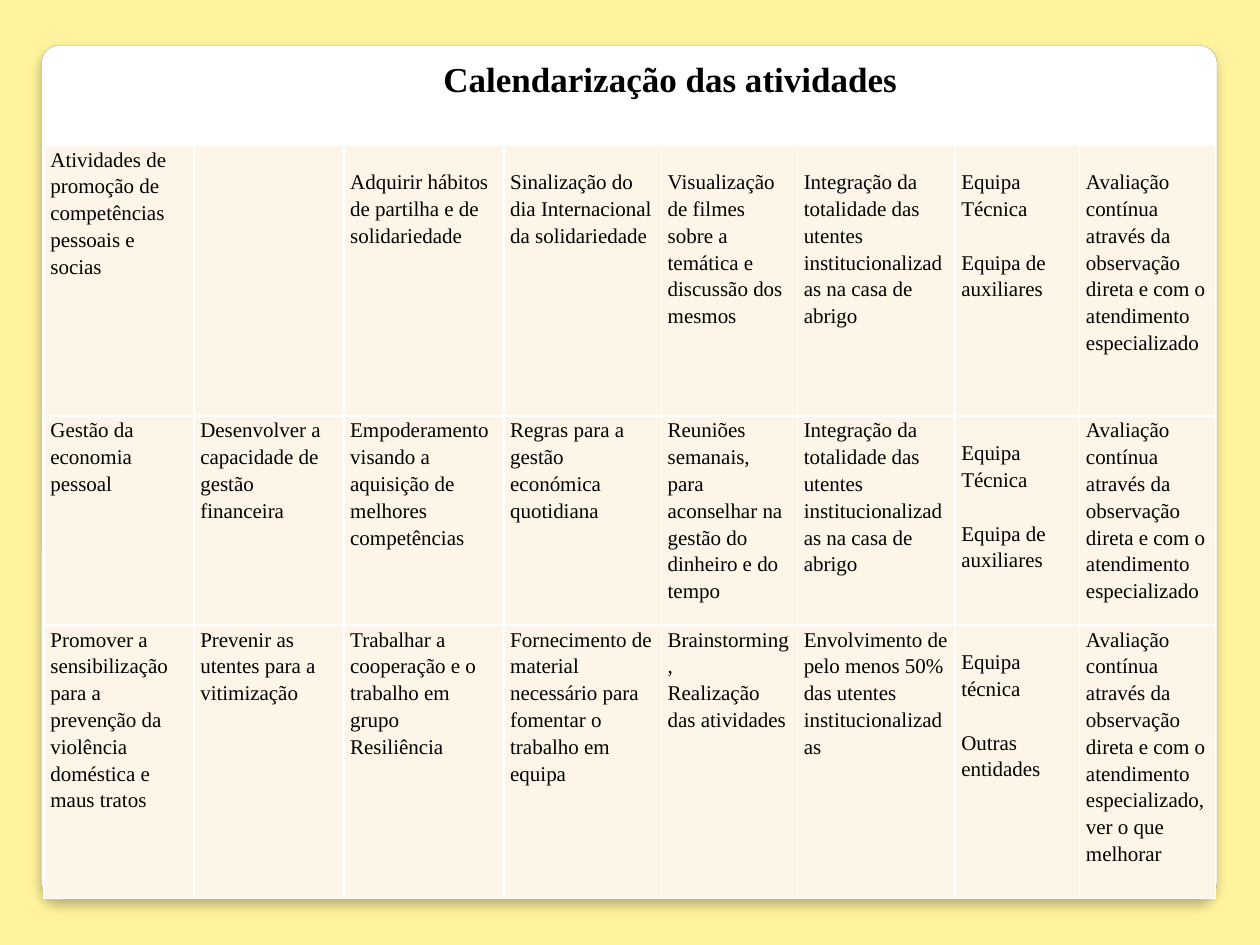
from lxml import etree
from pptx import Presentation
from pptx import util as u
from pptx.dml.color import RGBColor
from pptx.enum import shapes, text
from pptx.oxml import parse_xml
from pptx.oxml.ns import nsdecls, qn

COLORS = {
    "background": "FFF39D",
    "panel_line": "A4A4A4",
    "cell": "FDF6E8",
    "border": "FFFFFF",
    "text": "000000",
}
PANEL_STOPS = [(0, "FFFFFF"), (98, "FFFFFF"), (99, "F7F7F7"), (100, "DADADA")]
FONT = "Times New Roman"

COL_WIDTHS = [1.19, 1.19, 1.27, 1.25, 1.08, 1.25, 0.99, 1.08]
ROW_HEIGHTS = [2.15, 1.66, 2.17]
TEAM_COL = 6

INTEGRATION = "Integração da totalidade das utentes institucionalizadas na casa de abrigo"
EVALUATION = ("Avaliação contínua através da observação direta "
              "e com o atendimento especializado")
TEAM = ["Equipa Técnica", "Equipa de auxiliares"]

# Each cell is a list of paragraphs
ACTIVITIES = [
    [
        ["Atividades de promoção de competências pessoais e socias"],
        [],
        ["Adquirir hábitos de partilha e de solidariedade"],
        ["Sinalização do dia Internacional da solidariedade"],
        ["Visualização de filmes sobre a temática e discussão dos mesmos"],
        [INTEGRATION],
        TEAM,
        [EVALUATION],
    ],
    [
        ["Gestão da economia pessoal"],
        ["Desenvolver a capacidade de gestão financeira"],
        ["Empoderamento visando a aquisição de melhores competências"],
        ["Regras para a gestão económica quotidiana"],
        ["Reuniões semanais, para aconselhar na gestão do dinheiro e do tempo"],
        [INTEGRATION],
        TEAM,
        [EVALUATION],
    ],
    [
        ["Promover a sensibilização para a prevenção da violência doméstica e maus tratos"],
        ["Prevenir as utentes para a vitimização"],
        ["Trabalhar a cooperação e o trabalho em grupo", "Resiliência"],
        ["Fornecimento de material necessário para fomentar o trabalho em equipa"],
        ["Brainstorming,", "Realização das atividades"],
        ["Envolvimento de pelo menos 50% das utentes institucionalizadas"],
        ["Equipa técnica", "Outras entidades"],
        [EVALUATION + ", ver o que melhorar"],
    ],
]


def rgb(name):
    return RGBColor.from_string(COLORS[name])


def add_run(p, content, size, bold=False):
    r = p.add_run()
    r.text = content
    r.font.name = FONT
    r.font.size = u.Pt(size)
    r.font.bold = bold
    r.font.color.rgb = rgb("text")


def add_panel(s):
    sp = s.shapes.add_shape(shapes.MSO_SHAPE.ROUNDED_RECTANGLE, u.Inches(0.33),
                            u.Inches(0.36), u.Inches(9.33), u.Inches(6.78))
    sp.adjustments[0] = 0.021
    sp.line.color.rgb = rgb("panel_line")
    sp.line.width = u.Pt(0.16)

    # Vertical gradient that darkens only at the bottom edge
    sp.fill.gradient()
    sp.fill.gradient_angle = 270
    props = sp._element.spPr
    stops = props.find(".//" + qn("a:gsLst"))
    for old in list(stops):
        stops.remove(old)
    for position, color in PANEL_STOPS:
        stop = etree.SubElement(stops, qn("a:gs"), pos=str(position * 1000))
        etree.SubElement(stop, qn("a:srgbClr"), val=color)

    # Soft shadow below
    sp.shadow.inherit = False
    props.remove(props.find(qn("a:effectLst")))
    props.append(parse_xml(
        f'<a:effectLst {nsdecls("a")}><a:outerShdw blurRad="{u.Pt(6)}" '
        f'dist="{u.Pt(4)}" dir="5400000" algn="t" rotWithShape="0">'
        '<a:srgbClr val="000000"><a:alpha val="25000"/></a:srgbClr>'
        '</a:outerShdw></a:effectLst>'))

    # Behind the title
    s.shapes._spTree.insert(2, sp._element)


def set_title(s):
    sp = s.shapes.title
    sp.left, sp.top = u.Inches(2.64), u.Inches(0.36)
    sp.width, sp.height = u.Inches(5.43), u.Inches(0.46)
    tf = sp.text_frame
    tf.word_wrap = True
    tf.auto_size = text.MSO_AUTO_SIZE.NONE
    tf.vertical_anchor = text.MSO_ANCHOR.TOP
    p = tf.paragraphs[0]
    p.alignment = text.PP_ALIGN.CENTER
    p.line_spacing = 1.15
    p.space_before = u.Pt(0)
    add_run(p, "Calendarização das atividades ", 20, bold=True)


def add_borders(cell):
    props = cell._tc.get_or_add_tcPr()
    for side in ("lnL", "lnR", "lnT", "lnB"):
        props.append(parse_xml(
            f'<a:{side} {nsdecls("a")} w="{u.Pt(1)}"><a:solidFill>'
            f'<a:srgbClr val="{COLORS["border"]}"/></a:solidFill></a:{side}>'))


def fill_cell(cell, paragraphs, lowered, gap):
    add_borders(cell)
    cell.fill.solid()
    cell.fill.fore_color.rgb = rgb("cell")
    cell.margin_left = cell.margin_right = u.Inches(0.05)
    cell.margin_top = u.Inches(0.18 if lowered else 0)
    cell.margin_bottom = 0
    tf = cell.text_frame
    for i, content in enumerate(paragraphs):
        p = tf.add_paragraph() if i else tf.paragraphs[0]
        p.line_spacing = 1.15
        if i:
            p.space_before = u.Pt(gap)
        add_run(p, content, 12)


def add_activity_table(s):
    table = s.shapes.add_table(
        len(ROW_HEIGHTS), len(COL_WIDTHS), u.Inches(0.35), u.Inches(1.15),
        u.Inches(sum(COL_WIDTHS)), u.Inches(sum(ROW_HEIGHTS))).table
    table.first_row = table.horz_banding = False
    for column, width in zip(table.columns, COL_WIDTHS):
        column.width = u.Inches(width)
    for row, height in zip(table.rows, ROW_HEIGHTS):
        row.height = u.Inches(height)
    for i, row in enumerate(ACTIVITIES):
        for j, paragraphs in enumerate(row):
            is_team = j == TEAM_COL
            lowered = is_team or (i == 0 and j > 1)
            fill_cell(table.cell(i, j), paragraphs, lowered, 15.3 if is_team else 0)


def main():
    prs = Presentation()
    prs.slide_width, prs.slide_height = u.Inches(10), u.Inches(7.5)
    s = prs.slides.add_slide(prs.slide_layouts[5])
    s.background.fill.solid()
    s.background.fill.fore_color.rgb = rgb("background")
    add_panel(s)
    set_title(s)
    add_activity_table(s)
    prs.save("out.pptx")


if __name__ == "__main__":
    main()
